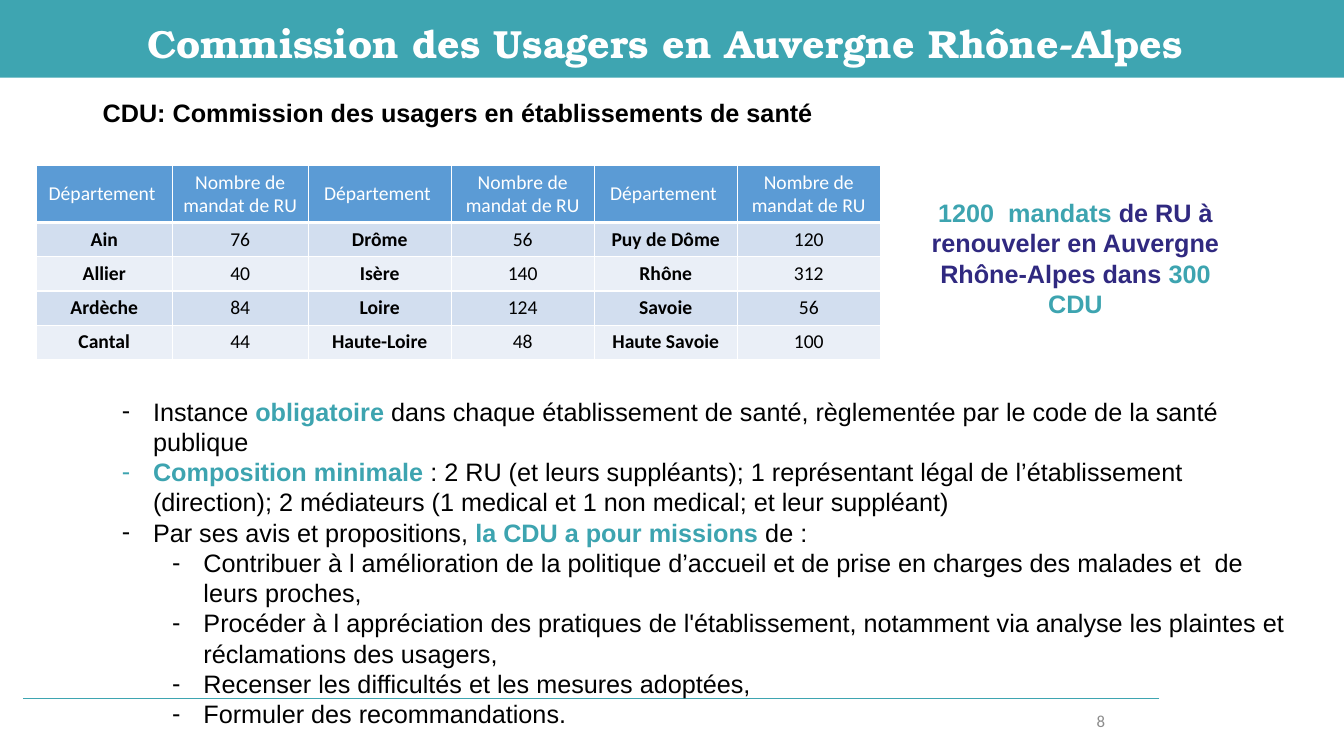
from dataclasses import dataclass
from typing import NamedTuple

from lxml.etree import SubElement
from pptx import Presentation
from pptx.dml.color import RGBColor as Rgb
from pptx.enum.shapes import MSO_CONNECTOR as Link, MSO_SHAPE as Kind
from pptx.enum.text import MSO_ANCHOR as Anchor, PP_ALIGN as Align
from pptx.oxml.ns import qn
from pptx.util import Inches, Pt


@dataclass(frozen=True)
class Theme:
    teal: str = "3EA5B1"
    accent: str = "3DA4B0"
    navy: str = "302980"
    black: str = "000000"
    white: str = "FFFFFF"
    grey: str = "8C8C8C"
    head: str = "5B9BD5"
    bands: tuple = ("D2DEEF", "EAEFF7")
    serif: str = "TeX Gyre Bonum"
    sans: str = "Arial"
    grid: str = "Calibri"
    title: int = 28
    body: int = 18
    cell: int = 14
    note: int = 12


class Box(NamedTuple):
    left: int
    top: int
    width: int
    height: int


T = Theme()
WIDE, HIGH = Inches(13.33), Inches(7.5)

HEADS = ["Département ", "Nombre de mandat de RU"] * 3
ROWS = [
    ["Ain", "76", "Drôme", "56", "Puy de Dôme", "120"],
    ["Allier", "40", "Isère", "140", "Rhône", "312"],
    ["Ardèche", "84", "Loire", "124", "Savoie", "56"],
    ["Cantal", "44", "Haute-Loire", "48", "Haute Savoie", "100"],
]
COLS = [135, 135, 142, 142, 142, 142]
LINES = [56, 34, 34, 34, 34]

CLAIM = [
    ("1200  mandats ", T.accent),
    ("de RU à renouveler en Auvergne Rhône-Alpes dans ", T.navy),
    ("300 CDU", T.accent),
]
# Level, then pieces of text with True for the stressed ones
POINTS = [
    (0, [("Instance ", False), ("obligatoire", True),
         (" dans chaque établissement de santé, règlementée par le code de la santé publique", False)]),
    (0, [("Composition minimale ", True),
         (": 2 RU (et leurs suppléants); 1 représentant légal de l’établissement (direction); "
          "2 médiateurs (1 medical et 1 non medical; et leur suppléant)", False)]),
    (0, [("Par ses avis et propositions, ", False), ("la CDU a pour missions ", True), ("de :", False)]),
    (1, [("Contribuer à l amélioration de la politique d’accueil et de prise en charges "
          "des malades et  de leurs proches,", False)]),
    (1, [("Procéder à l appréciation des pratiques de l'établissement, notamment via analyse "
          "les plaintes et réclamations des usagers,", False)]),
    (1, [("Recenser les difficultés et les mesures adoptées,", False)]),
    (1, [("Formuler des recommandations.", False)]),
]


def area(left, top, width, height):
    """Box from percentages of the slide's size."""
    return Box(int(WIDE * left / 100), int(HIGH * top / 100),
               int(WIDE * width / 100), int(HIGH * height / 100))


def style(font, name, size, color=None, bold=False):
    font.name, font.size, font.bold = name, Pt(size), bold
    if color:
        font.color.rgb = Rgb.from_string(color)


def paint(part, color):
    part.fill.solid()
    part.fill.fore_color.rgb = Rgb.from_string(color)


def frame(slide, box, anchor=Anchor.TOP):
    text = slide.shapes.add_textbox(*box).text_frame
    text.word_wrap = True
    text.vertical_anchor = anchor
    return text


def label(slide, box, words, font, align=Align.CENTER, anchor=Anchor.TOP):
    para = frame(slide, box, anchor).paragraphs[0]
    para.text, para.alignment = words, align
    style(para.font, *font)


def footer(slide, box, page):
    rule = slide.shapes.add_connector(Link.STRAIGHT, box.left + box.width, box.top, box.left, box.top)
    rule.line.color.rgb = Rgb.from_string(T.teal)
    rule.line.width = Pt(1)
    SubElement(rule._element.spPr, qn("a:effectLst"))
    label(slide, area(70.67, 92.67, 22.5, 5.33), page, (T.grid, T.note, T.grey), anchor=Anchor.MIDDLE)


def banner(slide, box, words):
    band = slide.shapes.add_shape(Kind.RECTANGLE, *box)
    band.shadow.inherit = False
    paint(band, T.teal)
    band.line.fill.background()
    inner = box._replace(top=int(box.height * 0.18), height=int(box.height * 0.74))
    label(slide, inner, words, (T.serif, T.title, T.white, True))


def edge(cell, **widths):
    """Draw white borders, given in points by side: L, R, T, B."""
    props = cell._tc.get_or_add_tcPr()
    for side, width in widths.items():
        line = SubElement(props, qn(f"a:ln{side}"), w=str(Pt(width)))
        SubElement(SubElement(line, qn("a:solidFill")), qn("a:srgbClr"), val=T.white)


def mandates(slide, box):
    table = slide.shapes.add_table(len(LINES), len(COLS), *box).table
    for col, share in zip(table.columns, COLS):
        col.width = int(box.width * share / sum(COLS))
    for row, share in zip(table.rows, LINES):
        row.height = int(box.height * share / sum(LINES))
    for r, texts in enumerate([HEADS] + ROWS):
        top = r == 0
        for c, words in enumerate(texts):
            cell = table.cell(r, c)
            edge(cell, L=1, R=1, T=3 if r == 1 else 1, B=3 if top else 1)
            paint(cell, T.head if top else T.bands[(r - 1) % 2])
            cell.vertical_anchor = Anchor.MIDDLE if top else Anchor.TOP
            para = cell.text_frame.paragraphs[0]
            para.text, para.alignment = words, Align.CENTER
            style(para.font, T.grid, T.cell, T.white if top else T.black, not top and c % 2 == 0)


def claim(slide, box):
    para = frame(slide, box).paragraphs[0]
    para.alignment = Align.CENTER
    style(para.font, T.sans, T.body, bold=True)
    for words, color in CLAIM:
        run = para.add_run()
        run.text = words
        run.font.color.rgb = Rgb.from_string(color)


def bullet(para, level):
    para.level = level
    props = para._p.get_or_add_pPr()
    props.set("marL", str(Inches(0.31 + 0.5 * level)))
    props.set("indent", str(-Inches(0.31)))
    SubElement(props, qn("a:buFont"), typeface=T.sans)
    SubElement(props, qn("a:buChar"), char="-")


def missions(slide, box):
    text = frame(slide, box)
    for i, (level, parts) in enumerate(POINTS):
        para = text.add_paragraph() if i else text.paragraphs[0]
        bullet(para, level)
        style(para.font, T.sans, T.body)
        for words, strong in parts:
            run = para.add_run()
            run.text = words
            run.font.bold = strong
            run.font.color.rgb = Rgb.from_string(T.accent if strong else T.black)


def main():
    deck = Presentation()
    deck.slide_width, deck.slide_height = WIDE, HIGH
    slide = deck.slides.add_slide(deck.slide_layouts[6])
    footer(slide, area(1.73, 92.4, 84.54, 0), "8")
    banner(slide, area(0, 0, 100, 10.27), "Commission des Usagers en Auvergne Rhône-Alpes ")
    label(slide, area(6.9, 12.27, 86.27, 5.33), "CDU: Commission des usagers en établissements de santé",
          (T.sans, T.body, T.black, True), Align.LEFT)
    mandates(slide, area(2.7, 21.87, 62.8, 25.6))
    claim(slide, area(68.2, 25.47, 23.63, 17.47))
    missions(slide, area(8.33, 51.73, 88.6, 45.73))
    deck.save("out.pptx")


if __name__ == "__main__":
    main()
